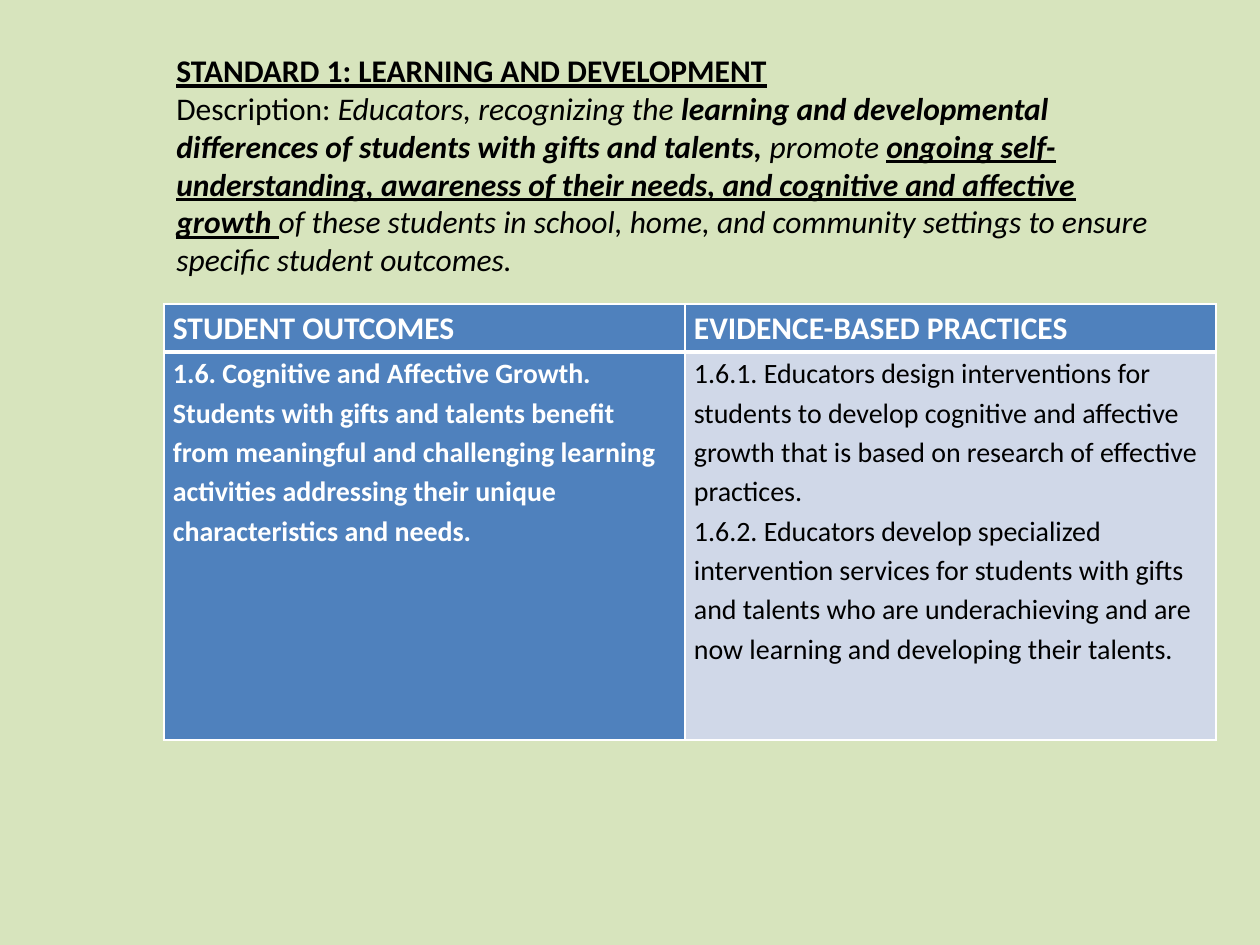
from dataclasses import dataclass

from lxml.etree import SubElement
from pptx import Presentation
from pptx.dml.color import RGBColor
from pptx.enum.text import MSO_AUTO_SIZE as AutoSize
from pptx.oxml.ns import qn
from pptx.slide import Slide
from pptx.util import Emu, Pt

EMU_PER_PX = 914400 / 126

BLACK = RGBColor(0x00, 0x00, 0x00)
WHITE = RGBColor(0xFF, 0xFF, 0xFF)
PALE_GREEN = RGBColor(0xD7, 0xE4, 0xBD)
BLUE = RGBColor(0x4F, 0x81, 0xBD)
PALE_BLUE = RGBColor(0xD0, 0xD8, 0xE8)

STANDARD = [
    [("STANDARD 1: LEARNING AND DEVELOPMENT", dict(bold=True, underline=True))],
    [
        ("Description: ", {}),
        ("Educators, recognizing the ", dict(italic=True)),
        ("learning and developmental differences of students with gifts and talents,",
         dict(italic=True, bold=True)),
        (" promote ", dict(italic=True)),
        ("ongoing self-understanding, awareness of their needs, and cognitive and affective growth ",
         dict(italic=True, bold=True, underline=True)),
        ("of these students in school, home, and community settings to ensure specific student outcomes.",
         dict(italic=True)),
    ],
]
HEADERS = ["STUDENT OUTCOMES", "EVIDENCE-BASED PRACTICES"]
OUTCOME = (
    "1.6. Cognitive and Affective Growth. Students with gifts and talents benefit from "
    "meaningful and challenging learning activities addressing their unique "
    "characteristics and needs."
)
PRACTICES = [
    "1.6.1. Educators design interventions for students to develop cognitive and "
    "affective growth that is based on research of effective practices.",
    "1.6.2. Educators develop specialized intervention services for students with gifts "
    "and talents who are underachieving and are now learning and developing their talents.",
]


def px(length):
    return Emu(round(length * EMU_PER_PX))


def add_run(paragraph, text, *, font, size=18, color=BLACK, bold=False, italic=False, underline=False):
    run = paragraph.add_run()
    run.text = text
    run.font.name = font
    run.font.size = Pt(size)
    run.font.color.rgb = color
    run.font.bold = bold
    run.font.italic = italic
    run.font.underline = underline


def paragraphs_of(frame, count):
    """Return count paragraphs, the first being the one the frame already has."""
    return [frame.paragraphs[0]] + [frame.add_paragraph() for _ in range(count - 1)]


def set_borders(cell, color, **widths):
    """Set the cell's borders; widths are points for L, R, T and B."""
    properties = cell._tc.get_or_add_tcPr()
    for side, width in widths.items():
        line = SubElement(properties, qn(f"a:ln{side}"), w=str(Pt(width)))
        fill = SubElement(line, qn("a:solidFill"))
        SubElement(fill, qn("a:srgbClr"), val=str(color))


@dataclass
class SlideBuilder:
    slide: Slide
    font: str = "Calibri"
    line_spacing: float = 1.15
    cell_margin: int = 9

    def background(self, color):
        fill = self.slide.background.fill
        fill.solid()
        fill.fore_color.rgb = color

    def text(self, left, top, width, height, content):
        box = self.slide.shapes.add_textbox(px(left), px(top), px(width), px(height))
        frame = box.text_frame
        frame.word_wrap = True
        frame.auto_size = AutoSize.SHAPE_TO_FIT_TEXT
        for paragraph, runs in zip(paragraphs_of(frame, len(content)), content):
            for text, style in runs:
                add_run(paragraph, text, font=self.font, **style)

    def table(self, left, top, column_widths, row_heights):
        frame = self.slide.shapes.add_table(
            len(row_heights), len(column_widths), px(left), px(top),
            px(sum(column_widths)), px(sum(row_heights)))
        table = frame.table
        for column, width in zip(table.columns, column_widths):
            column.width = px(width)
        for row, height in zip(table.rows, row_heights):
            row.height = px(height)
        return table

    def cell(self, cell, texts, fill, top_border=1, bottom_border=1, **style):
        cell.margin_left = cell.margin_right = px(self.cell_margin)
        cell.margin_top = cell.margin_bottom = 0
        set_borders(cell, WHITE, L=1, R=1, T=top_border, B=bottom_border)
        cell.fill.solid()
        cell.fill.fore_color.rgb = fill
        for paragraph, text in zip(paragraphs_of(cell.text_frame, len(texts)), texts):
            paragraph.line_spacing = self.line_spacing
            add_run(paragraph, text, font=self.font, **style)


def main():
    presentation = Presentation()
    presentation.slide_width, presentation.slide_height = px(1260), px(945)
    builder = SlideBuilder(presentation.slides.add_slide(presentation.slide_layouts[6]))

    builder.background(PALE_GREEN)
    builder.text(164, 45, 1022, 242, STANDARD)

    table = builder.table(164, 304, column_widths=[521, 531], row_heights=[48, 388])
    for column, header in enumerate(HEADERS):
        builder.cell(table.cell(0, column), [header], BLUE, bottom_border=3, color=WHITE, bold=True)
    builder.cell(table.cell(1, 0), [OUTCOME], BLUE, top_border=3, size=16, color=WHITE, bold=True)
    builder.cell(table.cell(1, 1), PRACTICES, PALE_BLUE, top_border=3, size=16)

    presentation.save("out.pptx")


if __name__ == "__main__":
    main()
